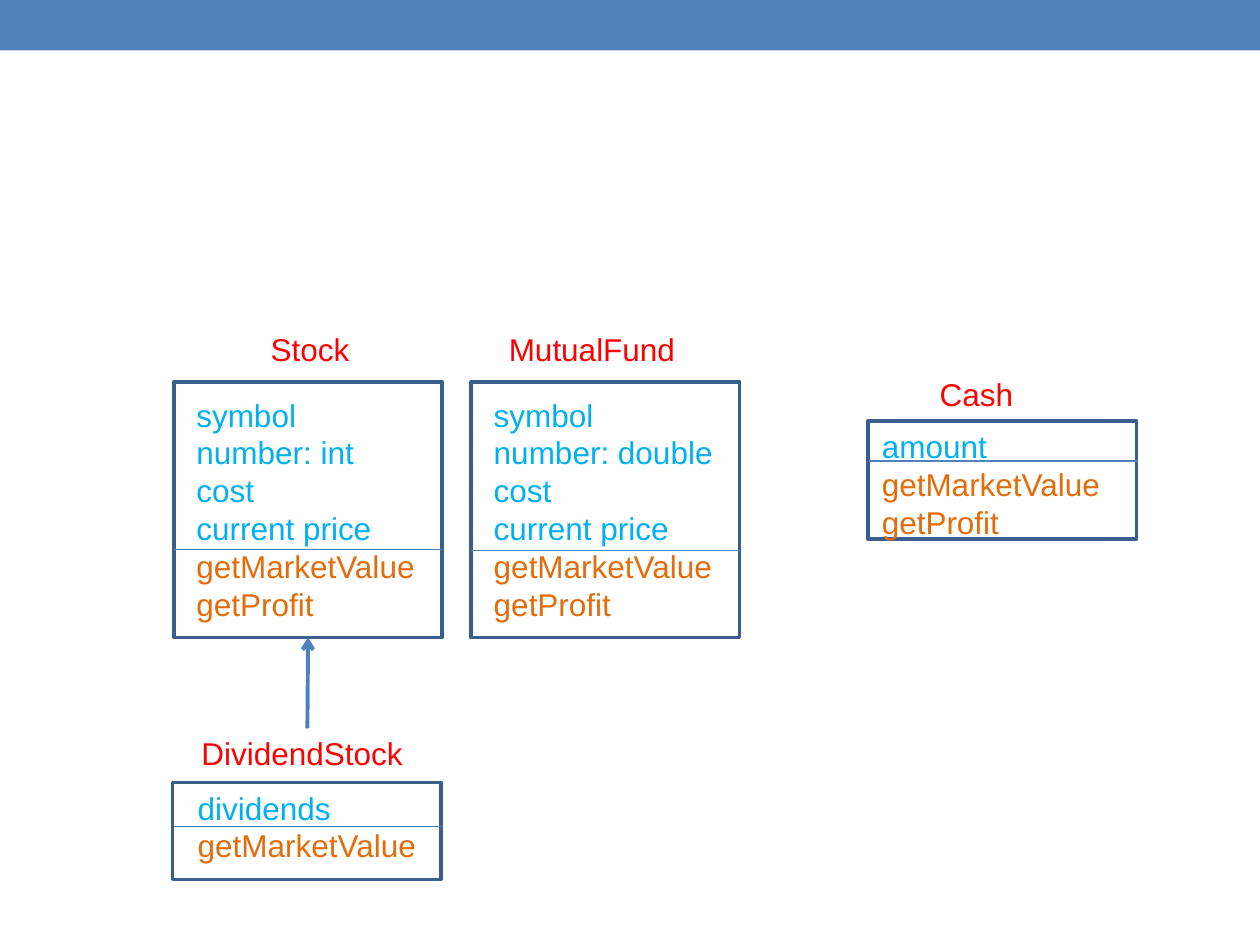
from dataclasses import dataclass

from lxml import etree
from pptx import Presentation
from pptx import util as u
from pptx.dml.color import RGBColor
from pptx.enum import shapes, text
from pptx.oxml import ns

# Grid of 100 columns by 75 rows; one cell is a tenth of an inch
CELL = u.Inches(0.1)
COLUMNS, ROWS = 100, 75
BOX_WIDTH = 21.3
LINE_HEIGHT = 3.03
INSET = 0.5
TITLE_HEIGHT = 4

BLUE = "4F81BD"
OUTLINE = "3A5F8C"
TITLE = "FF0000"
FIELD = "00B0F0"
METHOD = "E46C0A"


@dataclass
class ClassBox:
    name: str
    title: tuple      # left, top, width
    box: tuple        # left, top, height
    members: tuple    # left, top, width
    divider: tuple    # left, top
    fields: list
    methods: list


PRICED_METHODS = ["getMarketValue", "getProfit"]

CLASSES = [
    ClassBox("Cash", (73.6, 29.3, 7.9), (68.9, 33.4, 9.4), (69, 33.4, 19.6),
             (69, 36.6), ["amount"], PRICED_METHODS),
    ClassBox("Stock", (20.5, 25.7, 8.3), (13.8, 30.3, 20.3), (14.6, 30.9, 19.5),
             (13.8, 43.6), ["symbol", "number: int", "cost", "current price"],
             PRICED_METHODS),
    ClassBox("MutualFund", (39.4, 25.7, 15.3), (37.4, 30.3, 20.3), (38.2, 30.9, 19.5),
             (37.4, 43.7), ["symbol", "number: double", "cost", "current price"],
             PRICED_METHODS),
    ClassBox("DividendStock", (15, 57.8, 18.8), (13.7, 62.1, 7.7), (14.7, 62.1, 19.5),
             (13.8, 65.6), ["dividends"], ["getMarketValue"]),
]


def grid(*cells):
    return [round(cell * CELL) for cell in cells]


def colour(value):
    return RGBColor.from_string(value)


def add_rectangle(slide, left, top, width, height, fill=None, line=None):
    shape = slide.shapes.add_shape(shapes.MSO_SHAPE.RECTANGLE,
                                   *grid(left, top, width, height))
    shape.shadow.inherit = False
    if fill:
        shape.fill.solid()
        shape.fill.fore_color.rgb = colour(fill)
    else:
        shape.fill.background()
    if line:
        shape.line.color.rgb = colour(line)
        shape.line.width = u.Pt(2.08)
    else:
        shape.line.fill.background()
    return shape


def add_lines(slide, left, top, width, height, lines):
    """Add a text box with one paragraph for each (words, colour) pair."""
    box = slide.shapes.add_textbox(*grid(left, top, width, height))
    frame = box.text_frame
    frame.word_wrap = False
    frame.auto_size = text.MSO_AUTO_SIZE.SHAPE_TO_FIT_TEXT
    for index, (words, shade) in enumerate(lines):
        paragraph = frame.add_paragraph() if index else frame.paragraphs[0]
        run = paragraph.add_run()
        run.text = words
        run.font.name = "Arial"
        run.font.size = u.Pt(18)
        run.font.color.rgb = colour(shade)
    return box


def add_line(slide, start, end, width):
    line = slide.shapes.add_connector(shapes.MSO_CONNECTOR.STRAIGHT,
                                      *grid(*start, *end))
    line.line.color.rgb = colour(BLUE)
    line.line.width = u.Pt(width)
    etree.SubElement(line._element.spPr, ns.qn("a:effectLst"))
    return line


def add_class(slide, item):
    """Draw one class; return its title and its frame."""
    left, top, height = item.box
    frame = add_rectangle(slide, left, top, BOX_WIDTH, height, line=OUTLINE)

    lines = [(words, FIELD) for words in item.fields]
    lines += [(words, METHOD) for words in item.methods]
    add_lines(slide, *item.members, len(lines) * LINE_HEIGHT + 2 * INSET, lines)

    left, top = item.divider
    add_line(slide, (left, top), (left + BOX_WIDTH, top), 0.75)
    title = add_lines(slide, *item.title, TITLE_HEIGHT, [(item.name, TITLE)])
    return title, frame


def add_inheritance(slide, child_title, parent_frame):
    arrow = add_line(slide, (24.4, 57.8), (24.4, 50.6), 2.25)
    arrow.begin_connect(child_title, 0)
    arrow.end_connect(parent_frame, 2)
    etree.SubElement(arrow.line._get_or_add_ln(), ns.qn("a:tailEnd"), type="arrow")


def main():
    presentation = Presentation()
    presentation.slide_width, presentation.slide_height = grid(COLUMNS, ROWS)
    slide = presentation.slides.add_slide(presentation.slide_layouts[6])

    # Band across the top
    add_rectangle(slide, 0, 0, COLUMNS, 4, fill=BLUE)

    # Class boxes
    drawn = {item.name: add_class(slide, item) for item in CLASSES}

    # DividendStock extends Stock
    add_inheritance(slide, drawn["DividendStock"][0], drawn["Stock"][1])

    presentation.save("out.pptx")


if __name__ == "__main__":
    main()
